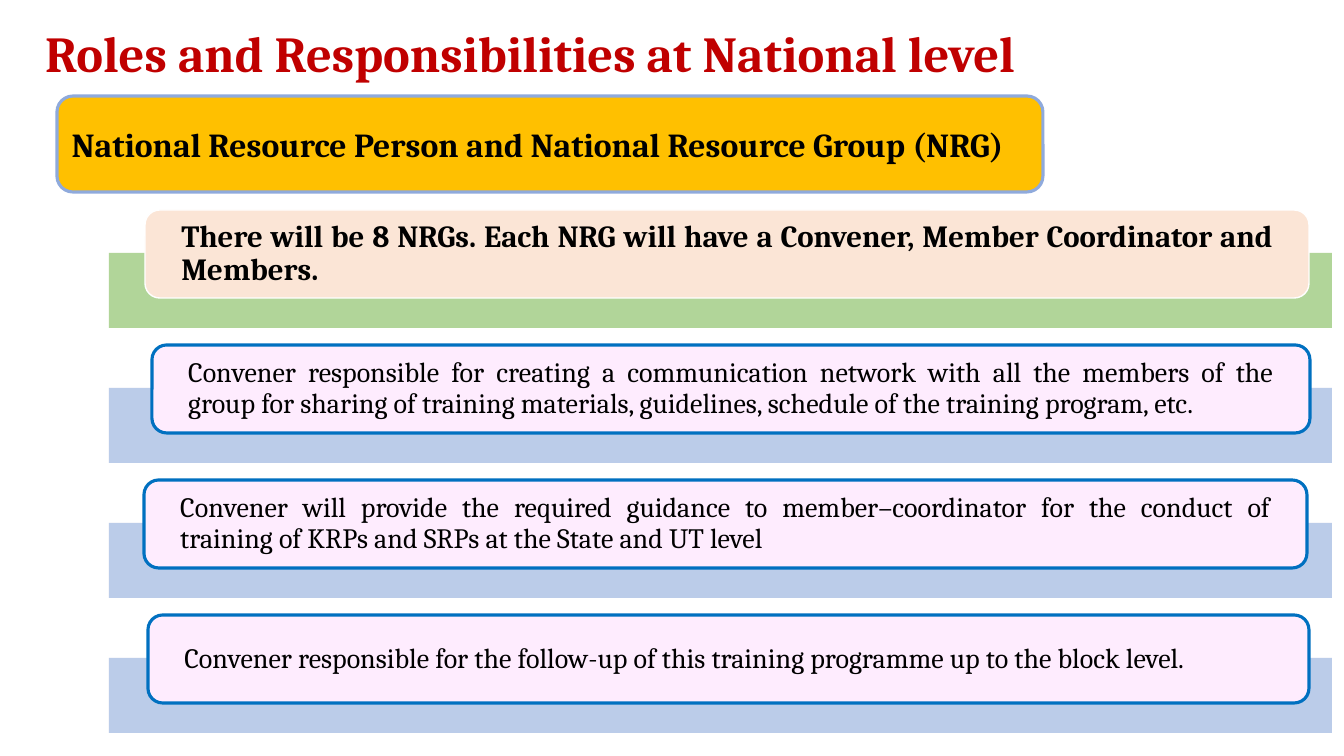
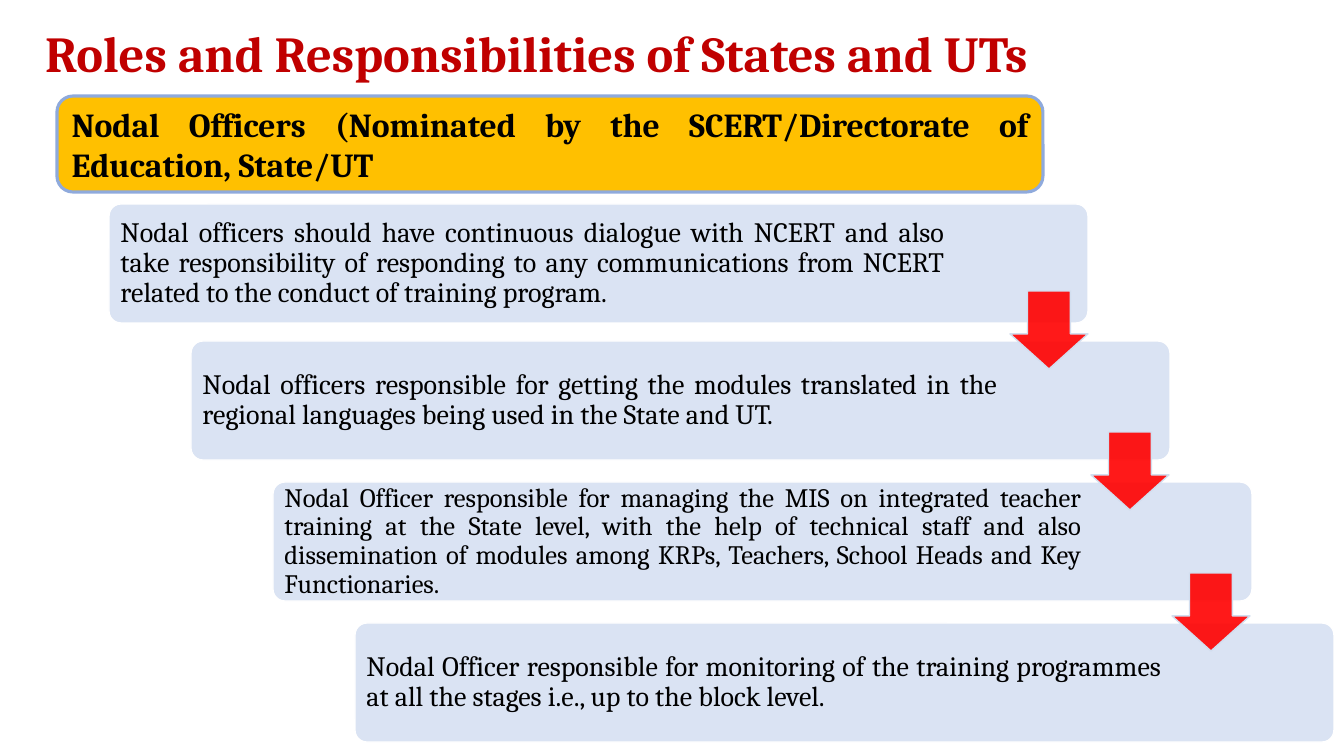
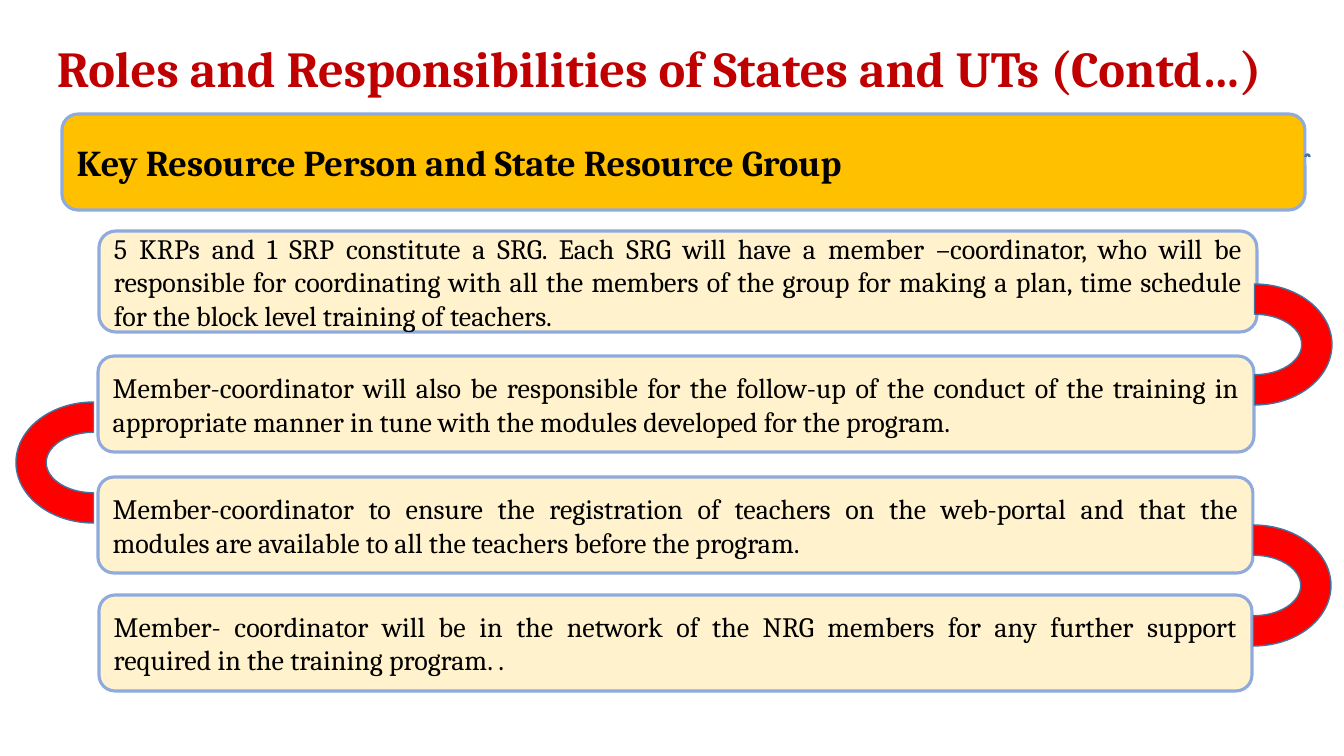
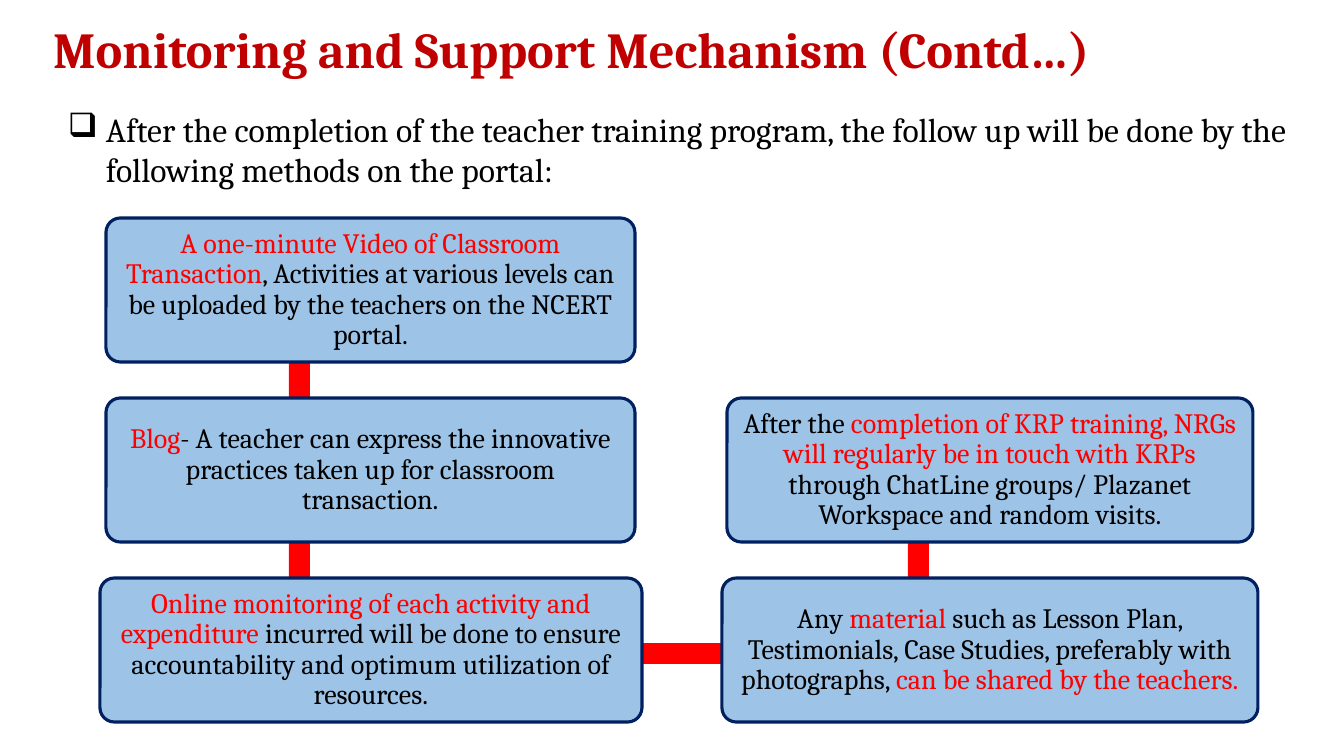
import pptx
import pptx.util
import pptx.dml.color
import pptx.enum.shapes
import pptx.enum.text
import pptx.oxml
import pptx.oxml.ns

SCALE = 914400 / 100.8
FONT = "Cambria"
COLORS = {
    "title": "C00000", "text": "000000", "red": "FF0000", "gold": "FFC000",
    "periwinkle": "8FAADC", "white": "FFFFFF", "peach": "FBE5D6",
    "green": "A9D18E", "blue_band": "B4C7E7", "pink": "FEECFE",
    "blue": "0070C0", "ice": "DAE3F3", "arrow_line": "D2DEEF",
    "cream": "FFF2CC", "steel": "43739E", "sky": "5B9BD5",
    "box": "9DC3E6", "navy": "002060",
}
PRESET = pptx.enum.shapes.MSO_SHAPE
ALIGN = pptx.enum.text.PP_ALIGN
TITLE_ONLY = 5


def add_box(slide, preset, bounds, fill, line=None, line_width=1, opacity=100):
    shape = slide.shapes.add_shape(preset, *[round(value * SCALE) for value in bounds])
    shape.shadow.inherit = False
    shape.fill.solid()
    shape.fill.fore_color.rgb = pptx.dml.color.RGBColor.from_string(COLORS[fill])
    if opacity < 100:
        color = shape._element.spPr.find(".//" + pptx.oxml.ns.qn("a:srgbClr"))
        color.append(pptx.oxml.parse_xml(
            f'<a:alpha {pptx.oxml.ns.nsdecls("a")} val="{opacity * 1000}"/>'))
    if line:
        shape.line.color.rgb = pptx.dml.color.RGBColor.from_string(COLORS[line])
        shape.line.width = pptx.util.Pt(line_width)
    else:
        shape.line.fill.background()
    return shape


def write_text(shape, pieces, size, align=ALIGN.JUSTIFY, bold=False, spacing=1.0,
               margins=(10, 5, 10, 5), anchor=pptx.enum.text.MSO_ANCHOR.MIDDLE):
    frame = shape.text_frame
    frame.word_wrap = True
    frame.auto_size = pptx.enum.text.MSO_AUTO_SIZE.NONE
    frame.vertical_anchor = anchor
    frame.margin_left, frame.margin_top, frame.margin_right, frame.margin_bottom = [
        round(value * SCALE) for value in margins]
    paragraph = frame.paragraphs[0]
    paragraph.alignment = align
    paragraph.line_spacing = spacing
    for text, color in pieces:
        run = paragraph.add_run()
        run.text = text
        run.font.name = FONT
        run.font.size = pptx.util.Pt(size)
        run.font.bold = bold
        run.font.color.rgb = pptx.dml.color.RGBColor.from_string(COLORS[color])


presentation = pptx.Presentation()
presentation.slide_width = round(1344 * SCALE)
presentation.slide_height = round(756 * SCALE)

titles = [
    ("Roles and Responsibilities at National level", (35, 12, 1273, 88)),
    ("Roles and Responsibilities of States and UTs", (35, 12, 1240, 88)),
    ("Roles and Responsibilities of States and UTs (Contd…)", (47, 27, 1297, 88)),
    ("Monitoring and Support Mechanism (Contd…)", (43, 13, 1232, 78)),
]
slides = []
for text, bounds in titles:
    slide = presentation.slides.add_slide(presentation.slide_layouts[TITLE_ONLY])
    title = slide.shapes.title
    title.left, title.top, title.width, title.height = [
        round(value * SCALE) for value in bounds]
    write_text(title, [(text, "title")], 36, ALIGN.LEFT, True, 0.9)
    slides.append(slide)
national, states, resource_group, monitoring = slides

duties = [
    (145, 1164, "There will be 8 NRGs. Each NRG will have a Convener, Member Coordinator and Members."),
    (152, 1158, "Convener responsible for creating a communication network with all the members of the group for sharing of training materials, guidelines, schedule of the training program, etc."),
    (144, 1163, "Convener will provide the required guidance to member–coordinator for the conduct of training of KRPs and SRPs at the State and UT level"),
    (148, 1161, "Convener responsible for the follow-up of this training programme up to the block level."),
]
for index, (left, width, text) in enumerate(duties):
    first = index == 0
    top = 210 + 135 * index
    add_box(national, PRESET.RECTANGLE, (109, top + 43, 1223, 75),
            "green" if first else "blue_band", opacity=90)
    card = add_box(national, PRESET.ROUNDED_RECTANGLE, (left, top, width, 88),
                   "peach" if first else "pink", "white" if first else "blue",
                   1 if first else 2.25)
    write_text(card, [(text, "text")], 22 if first else 20, bold=first,
               spacing=0.9, margins=(32, 0, 32, 0))

steps = [
    (204, 140, 20, "Nodal officers should have continuous dialogue with NCERT and also take responsibility of responding to any communications from NCERT related to the conduct of training program."),
    (341, 169, 20, "Nodal officers responsible for getting the modules translated in the regional languages being used in the State and UT."),
    (482, 167, 19, "Nodal Officer responsible for managing the MIS on integrated teacher training at the State level, with the help of technical staff and also dissemination of modules among KRPs, Teachers, School Heads and Key Functionaries."),
    (623, 169, 20, "Nodal Officer responsible for monitoring of the training programmes at all the stages i.e., up to the block level."),
]
for index, (top, right_margin, size, text) in enumerate(steps):
    step = add_box(states, PRESET.ROUNDED_RECTANGLE, (109 + 82 * index, top, 979, 119),
                   "ice", "white")
    step.adjustments[0] = 0.1
    write_text(step, [(text, "text")], size, spacing=0.9, margins=(8, 8, right_margin, 8))
for index in range(len(steps) - 1):
    arrow = add_box(states, PRESET.DOWN_ARROW, (1010 + 81 * index, 291 + 141 * index, 78, 78),
                    "red", "arrow_line", opacity=90)
    arrow.adjustments[0] = 0.55
    arrow.adjustments[1] = 0.45

banners = [
    (national, (57, 96, 986, 96), 24, ALIGN.JUSTIFY, "National Resource Person and National Resource Group (NRG)"),
    (states, (57, 96, 986, 96), 24, ALIGN.JUSTIFY, "Nodal Officers (Nominated by the SCERT/Directorate of Education, State/UT"),
    (resource_group, (62, 114, 1243, 96), 26, ALIGN.LEFT, "Key Resource Person and State Resource Group"),
]
for slide, bounds, size, align, text in banners:
    banner = add_box(slide, PRESET.ROUNDED_RECTANGLE, bounds, "gold", "periwinkle", 2.25)
    write_text(banner, [(text, "text")], size, align, True)

tasks = [
    ((99, 231, 1158, 101), "5 KRPs and 1 SRP constitute a SRG. Each SRG will have a member –coordinator, who will be responsible for coordinating with all the members of the group for making a plan, time schedule for the block level training of teachers."),
    ((98, 356, 1156, 96), "Member-coordinator will also be responsible for the follow-up of the conduct of the training in appropriate manner in tune with the modules developed for the program."),
    ((98, 477, 1155, 96), "Member-coordinator to ensure the registration of teachers on the web-portal and that the modules are available to all the teachers before the program."),
    ((99, 595, 1153, 96), "Member- coordinator will be in the network of the NRG members for any further support required in the training program. ."),
]
for bounds, text in tasks:
    task = add_box(resource_group, PRESET.ROUNDED_RECTANGLE, bounds, "cream", "periwinkle", 2.25)
    write_text(task, [(text, "text")], 20)
arcs = [
    ((1305, 154, 5, 5), 0, "sky"),
    ((1194, 267, 121, 155), 90, "red"),
    ((1193, 508, 121, 155), 90, "red"),
    ((33, 385, 121, 155), 270, "red"),
]
for bounds, rotation, fill in arcs:
    arc = add_box(resource_group, PRESET.BLOCK_ARC, bounds, fill, "steel")
    arc.rotation = rotation

for bounds in [(289, 254, 21, 179), (289, 434, 21, 179), (300, 643, 617, 21), (908, 434, 21, 179)]:
    add_box(monitoring, PRESET.RECTANGLE, bounds, "red")
methods = [
    (106, 0, 529, [("A one-minute Video of Classroom Transaction", "red"),
                   (", Activities at various levels can be uploaded by the teachers on the NCERT portal.", "text")]),
    (106, 1, 529, [("Blog", "red"),
                   ("- A teacher can express the innovative practices taken up for classroom transaction.", "text")]),
    (100, 2, 542, [("Online monitoring of each activity and expenditure", "red"),
                   (" incurred will be done to ensure accountability and optimum utilization of resources.", "text")]),
    (722, 2, 536, [("Any ", "text"), ("material ", "red"),
                   ("such as Lesson Plan, Testimonials, Case Studies, preferably with photographs, ", "text"),
                   ("can be shared by the teachers.", "red")]),
    (727, 1, 526, [("After the ", "text"),
                   ("completion of KRP training, NRGs will regularly be in touch with KRPs ", "red"),
                   ("through ChatLine groups/ Plazanet Workspace and random visits.", "text")]),
]
for left, row, width, pieces in methods:
    method = add_box(monitoring, PRESET.ROUNDED_RECTANGLE, (left, 218 + 180 * row, width, 144),
                     "box", "navy", 2.25)
    method.adjustments[0] = 0.1
    write_text(method, pieces, 20, ALIGN.CENTER, spacing=0.9, margins=(8, 8, 8, 8))

intro = monitoring.shapes.add_textbox(*[round(value * SCALE) for value in (58, 104, 1238, 92)])
write_text(intro, [("After the completion of the teacher training program, the follow up will be done by the following methods on the portal:", "text")],
           24, anchor=pptx.enum.text.MSO_ANCHOR.TOP)
properties = intro.text_frame.paragraphs[0]._p.get_or_add_pPr()
properties.set("marL", str(round(38 * SCALE)))
properties.set("indent", str(round(-38 * SCALE)))
properties.append(pptx.oxml.parse_xml(f'<a:buChar {pptx.oxml.ns.nsdecls("a")} char="❑"/>'))

presentation.save("out.pptx")
